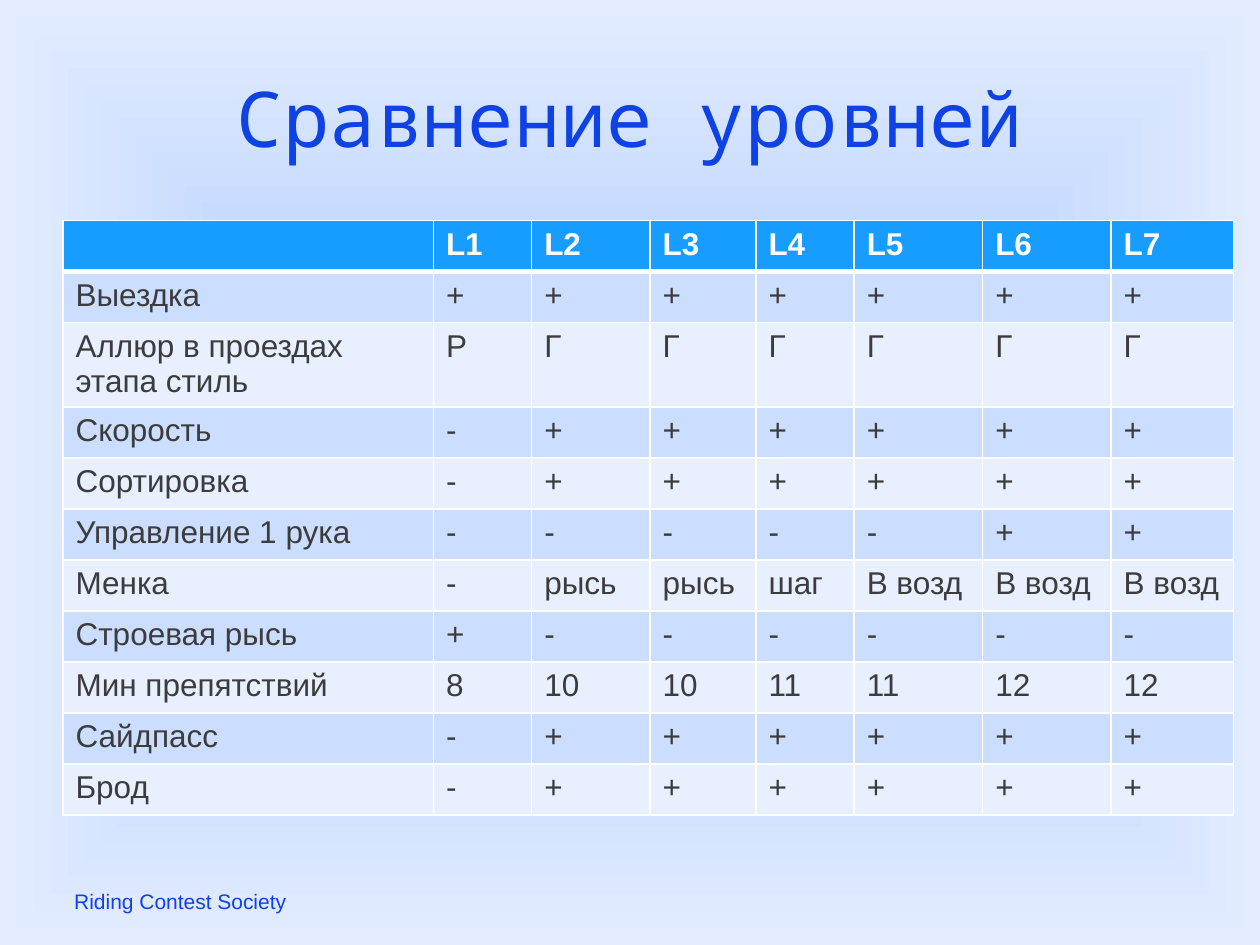
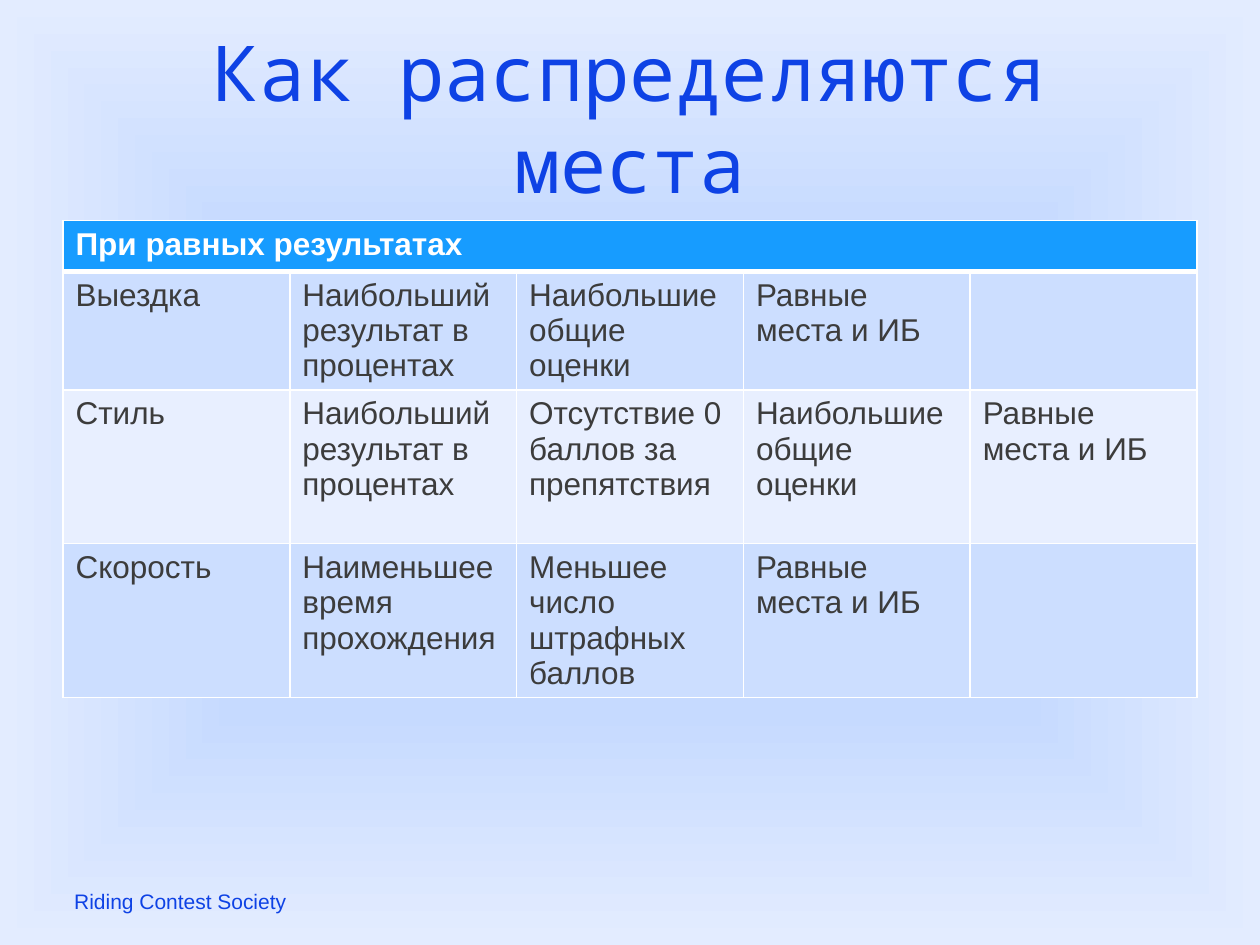
from pptx import Presentation
from pptx import util as u
from pptx.dml.color import RGBColor
from pptx.enum import text
from pptx.oxml import parse_xml
from pptx.oxml.ns import nsdecls, qn

COLORS = {
    "title": "0E42E5",
    "header": "179CFF",
    "odd_row": "CCDEFF",
    "even_row": "E8EFFF",
    "ink": "3C3C3C",
    "white": "FFFFFF",
    "glow": "C6DAFF",
    "edge": "E3ECFF",
}
TITLE_FONT, BODY_FONT = "Noto Sans Mono", "Arial"
FOOTER = "Riding Contest Society"
TABLE_LEFT, TABLE_TOP = 0.5, 1.75

# Level comparison: ten equal rows share what the two-line row leaves
TWO_LINES = 0.67
ROW = (4.72 - TWO_LINES) / 10
LEVEL_WIDTHS = [2.94, 0.78, 0.94, 0.84, 0.78, 1.02, 1.02, 0.97]
LEVEL_HEIGHTS = [ROW, ROW, TWO_LINES] + [ROW] * 8
LEVELS = [
    ["", "L1", "L2", "L3", "L4", "L5", "L6", "L7"],
    ["Выездка", *"+++++++"],
    ["Аллюр в проездах этапа стиль", *"РГГГГГГ"],
    ["Скорость", *"-++++++"],
    ["Сортировка", *"-++++++"],
    ["Управление 1 рука", *"-----++"],
    ["Менка", "-", "рысь", "рысь", "шаг", "В возд", "В возд", "В возд"],
    ["Строевая рысь", *"+------"],
    ["Мин препятствий", "8", "10", "10", "11", "11", "12", "12"],
    ["Сайдпасс", *"-++++++"],
    ["Брод", *"-++++++"],
]

# Tie-break rules
BEST_PERCENT = "Наибольший результат в процентах"
BEST_MARKS = "Наибольшие общие оценки"
SHARED_PLACE = "Равные места и ИБ"
TIE_WIDTHS = [1.8] * 5
TIE_HEIGHTS = [ROW, 0.94, 1.22, 1.22]
TIES = [
    ["При равных результатах", "", "", "", ""],
    ["Выездка", BEST_PERCENT, BEST_MARKS, SHARED_PLACE, ""],
    ["Стиль", BEST_PERCENT, "Отсутствие 0 баллов за препятствия",
     BEST_MARKS, SHARED_PLACE],
    ["Скорость", "Наименьшее время прохождения",
     "Меньшее число штрафных баллов", SHARED_PLACE, ""],
]


def rgb(name):
    return RGBColor.from_string(COLORS[name])


def style_font(para, name, size, color, bold=False):
    font = para.font
    font.name, font.size, font.bold = name, u.Pt(size), bold
    font.color.rgb = rgb(color)


def set_background(master):
    """Give every slide a gradient that glows from the centre."""
    master.background.fill.solid()
    solid = master.element.find(".//" + qn("p:bgPr")).find(qn("a:solidFill"))
    stops = "".join(
        f'<a:gs pos="{place}"><a:srgbClr val="{COLORS[name]}"/></a:gs>'
        for place, name in ((50000, "glow"), (100000, "edge")))
    gradient = parse_xml(
        f'<a:gradFill {nsdecls("a")} rotWithShape="1"><a:gsLst>{stops}</a:gsLst>'
        '<a:path path="shape"><a:fillToRect l="50000" t="50000" r="50000" '
        'b="50000"/></a:path></a:gradFill>')
    solid.getparent().replace(solid, gradient)


def add_title(page, words):
    box = page.shapes.title
    box.left, box.top = u.Inches(0.5), u.Inches(0.3)
    box.width, box.height = u.Inches(9), u.Inches(1.25)
    frame = box.text_frame
    frame.text = words
    frame.auto_size = text.MSO_AUTO_SIZE.NONE
    frame.vertical_anchor = text.MSO_ANCHOR.MIDDLE
    para = frame.paragraphs[0]
    para.alignment = text.PP_ALIGN.CENTER
    style_font(para, TITLE_FONT, 44, "title")


def add_footer(page):
    box = page.shapes.add_textbox(
        u.Inches(0.49), u.Inches(6.95), u.Inches(7.48), u.Inches(0.4))
    frame = box.text_frame
    frame.word_wrap = True
    frame.vertical_anchor = text.MSO_ANCHOR.MIDDLE
    frame.text = FOOTER
    style_font(frame.paragraphs[0], BODY_FONT, 12, "title")


def set_borders(cell, row):
    """White grid lines, thicker between the header and the body."""
    widths = {"L": 1, "R": 1, "T": 3 if row == 1 else 1, "B": 3 if row == 0 else 1}
    properties = cell._tc.get_or_add_tcPr()
    for place, (side, width) in enumerate(widths.items()):
        properties.insert(place, parse_xml(
            f'<a:ln{side} {nsdecls("a")} w="{u.Pt(width)}"><a:solidFill>'
            f'<a:srgbClr val="{COLORS["white"]}"/></a:solidFill></a:ln{side}>'))


def add_grid(page, rows, widths, heights):
    grid = page.shapes.add_table(
        len(rows), len(widths), u.Inches(TABLE_LEFT), u.Inches(TABLE_TOP),
        u.Inches(sum(widths)), u.Inches(sum(heights))).table
    for column, width in zip(grid.columns, widths):
        column.width = u.Inches(width)
    for line, height in zip(grid.rows, heights):
        line.height = u.Inches(height)
    for r, words in enumerate(rows):
        header = r == 0
        fill = "header" if header else "odd_row" if r % 2 else "even_row"
        for c, word in enumerate(words):
            cell = grid.cell(r, c)
            cell.text = word
            cell.fill.solid()
            cell.fill.fore_color.rgb = rgb(fill)
            set_borders(cell, r)
            style_font(cell.text_frame.paragraphs[0], BODY_FONT, 18,
                       "white" if header else "ink", bold=header)
    return grid


def add_page(deck, title, rows, widths, heights):
    page = deck.slides.add_slide(deck.slide_layouts.get_by_name("Title Only"))
    add_title(page, title)
    grid = add_grid(page, rows, widths, heights)
    add_footer(page)
    return grid


def main():
    deck = Presentation()
    deck.slide_width, deck.slide_height = u.Inches(10), u.Inches(7.5)
    set_background(deck.slide_master)

    add_page(deck, "Сравнение уровней", LEVELS, LEVEL_WIDTHS, LEVEL_HEIGHTS)

    ties = add_page(deck, "Как распределяются места", TIES, TIE_WIDTHS, TIE_HEIGHTS)
    ties.cell(0, 0).merge(ties.cell(0, len(TIE_WIDTHS) - 1))

    deck.save("out.pptx")


if __name__ == "__main__":
    main()
